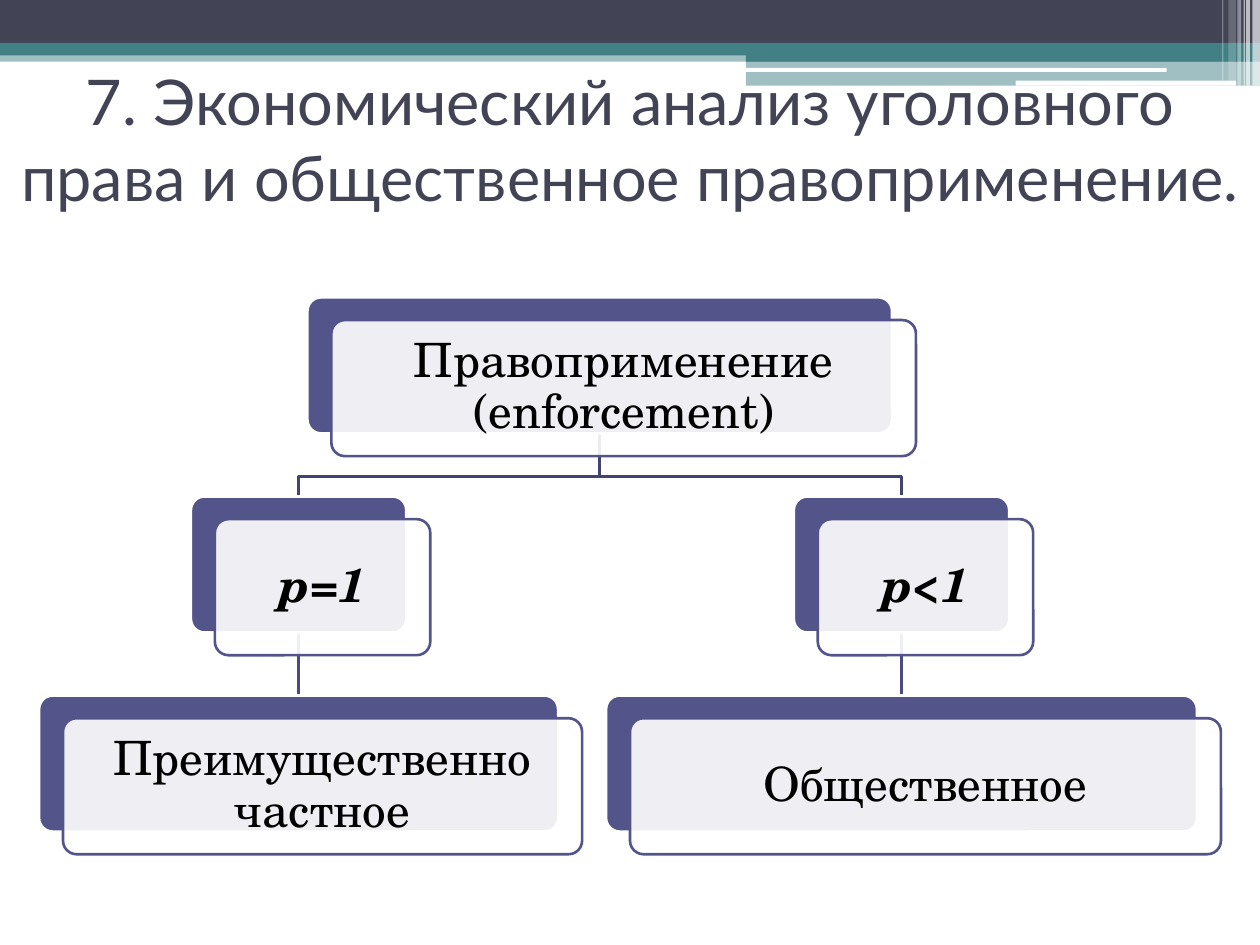
from collections import namedtuple

from lxml import etree
from pptx import Presentation
from pptx.dml.color import RGBColor
from pptx.enum.shapes import MSO_CONNECTOR, MSO_SHAPE
from pptx.enum.text import MSO_ANCHOR, PP_ALIGN
from pptx.oxml.ns import qn
from pptx.util import Inches, Pt

RECTANGLE = MSO_SHAPE.RECTANGLE
ROUNDED = MSO_SHAPE.ROUNDED_RECTANGLE
STRAIGHT = MSO_CONNECTOR.STRAIGHT
MIDDLE = MSO_ANCHOR.MIDDLE
CENTER = PP_ALIGN.CENTER

WHITE = RGBColor(0xFF, 0xFF, 0xFF)
BLACK = RGBColor(0x00, 0x00, 0x00)
SLATE = RGBColor(0x42, 0x44, 0x56)
TEAL = RGBColor(0x43, 0x80, 0x86)
INDIGO = RGBColor(0x53, 0x54, 0x8A)
BRANCH_COLOR = RGBColor(0x42, 0x43, 0x6F)
STEM_COLOR = RGBColor(0x4B, 0x4C, 0x7D)

TITLE = "7. Экономический анализ уголовного права и общественное правоприменение."
TITLE_FONT = {"name": "Lato", "size": Pt(36)}
NODE_FONT = {"name": "TeX Gyre Schola", "size": Pt(27)}
CONDITION_FONT = {**NODE_FONT, "bold": True, "italic": True}

BOTTOM, TOP = 2, 0
LINE_WIDTH = Pt(1.5)
CARD_HEIGHT = 1.08
CARD_SHIFT = (0.19, 0.18)
LEVEL_STEP = 1.58
BRANCH_DROP = 0.34

Box = namedtuple("Box", "left top width height")


def add_block(page, kind, box, color, opacity=100, outline=None):
    block = page.shapes.add_shape(kind, *(Inches(value) for value in box))
    block.shadow.inherit = False
    block.fill.solid()
    block.fill.fore_color.rgb = color
    if opacity < 100:
        fill_color = block.element.spPr.xpath("a:solidFill/a:srgbClr")[0]
        etree.SubElement(fill_color, qn("a:alpha"), val=str(opacity * 1000))
    if outline is None:
        block.line.fill.background()
    else:
        block.line.color.rgb = outline
        block.line.width = LINE_WIDTH
    return block


def write_text(frame, text, font, color, margin, line_spacing=1.0):
    settings = {"word_wrap": True, "vertical_anchor": MIDDLE}
    for side in ("left", "right", "top", "bottom"):
        settings[f"margin_{side}"] = margin
    for name, value in settings.items():
        setattr(frame, name, value)
    para = frame.paragraphs[0]
    para.alignment = CENTER
    para.line_spacing = line_spacing
    span = para.add_run()
    span.text = text
    for name, value in font.items():
        setattr(span.font, name, value)
    span.font.color.rgb = color


def draw_header(page, box):
    bars = [
        (RECTANGLE, (0, 0.4, 10, 0.09), TEAL, 50),
        (RECTANGLE, (0, 0, 10, 0.34), SLATE, 100),
        (RECTANGLE, (0, 0.34, 10, 0.1), TEAL, 100),
        (RECTANGLE, (5.92, 0.39, 4.08, 0.1), TEAL, 100),
        (RECTANGLE, (5.92, 0.48, 4.08, 0.2), TEAL, 50),
        (ROUNDED, (5.91, 0.54, 3.35, 0.03), WHITE, 100),
        (ROUNDED, (8.06, 0.64, 1.75, 0.04), WHITE, 100),
    ]
    stripes = [
        (9.94, 0.06, 0.68, 65),
        (9.89, 0.03, 0.68, 65),
        (9.87, 0.01, 0.68, 60),
        (9.82, 0.03, 0.68, 40),
        (9.75, 0.06, 0.64, 20),
        (9.7, 0.01, 0.64, 30),
    ]
    bars += [
        (RECTANGLE, (left, 0, width, height), WHITE, opacity)
        for left, width, height, opacity in stripes
    ]
    for kind, (left, top, width, height), color, opacity in bars:
        place = Box(box.left + left, box.top + top, width, height)
        add_block(page, kind, place, color, opacity)


def draw_title(page, box):
    title = page.shapes.add_textbox(*(Inches(value) for value in box))
    write_text(title.text_frame, TITLE, TITLE_FONT, SLATE, Inches(0.1))


def draw_branch(page, start, end):
    turn = start[1] + BRANCH_DROP
    corners = [(start[0], turn), (end[0], turn), end]
    builder = page.shapes.build_freeform(Inches(start[0]), Inches(start[1]), scale=1.0)
    builder.add_line_segments([(Inches(x), Inches(y)) for x, y in corners], close=False)
    branch = builder.convert_to_shape()
    branch.shadow.inherit = False
    branch.fill.background()
    branch.line.color.rgb = BRANCH_COLOR
    branch.line.width = LINE_WIDTH


def draw_stem(page):
    stem = page.shapes.add_connector(STRAIGHT, 0, 0, 0, 0)
    stem.line.color.rgb = STEM_COLOR
    stem.line.width = LINE_WIDTH
    etree.SubElement(stem.element.spPr, qn("a:effectLst"))
    return stem


def draw_node(page, box, text, font):
    back = add_block(page, ROUNDED, box, INDIGO, outline=WHITE)
    shift_x, shift_y = CARD_SHIFT
    front_box = box._replace(left=box.left + shift_x, top=box.top + shift_y)
    front = add_block(page, ROUNDED, front_box, WHITE, 90, INDIGO)
    for card in (back, front):
        card.adjustments[0] = 0.1
    write_text(front.text_frame, text, font, BLACK, Inches(0.08), 0.9)
    return back


def draw_tree(page, box):
    def node_box(center, level, width):
        left = box.left + center - width / 2
        return Box(left, box.top + level * LEVEL_STEP, width, CARD_HEIGHT)

    root_center = 4.45
    columns = [
        (2.06, "p=1", "Преимущественно частное", 4.12),
        (6.845, "p<1", "Общественное", 4.69),
    ]
    root_bottom = (box.left + root_center, box.top + CARD_HEIGHT)
    stems = []
    for center, *_ in columns:
        draw_branch(page, root_bottom, (box.left + center, box.top + LEVEL_STEP))
        stems.append(draw_stem(page))

    root_box = node_box(root_center, 0, 4.64)
    draw_node(page, root_box, "Правоприменение (enforcement)", NODE_FONT)
    for stem, (center, condition, outcome, width) in zip(stems, columns):
        upper = draw_node(page, node_box(center, 1, 1.71), condition, CONDITION_FONT)
        lower = draw_node(page, node_box(center, 2, width), outcome, NODE_FONT)
        stem.begin_connect(upper, BOTTOM)
        stem.end_connect(lower, TOP)


def main():
    deck = Presentation()
    deck.slide_width = Inches(10)
    deck.slide_height = Inches(7.5)
    page = deck.slides.add_slide(deck.slide_layouts[6])
    draw_header(page, Box(0, 0, 10, 0.68))
    draw_title(page, Box(0, 0.47, 10, 1.25))
    draw_tree(page, Box(0.31, 2.36, 9.38, 4.42))
    deck.save("out.pptx")


if __name__ == "__main__":
    main()
